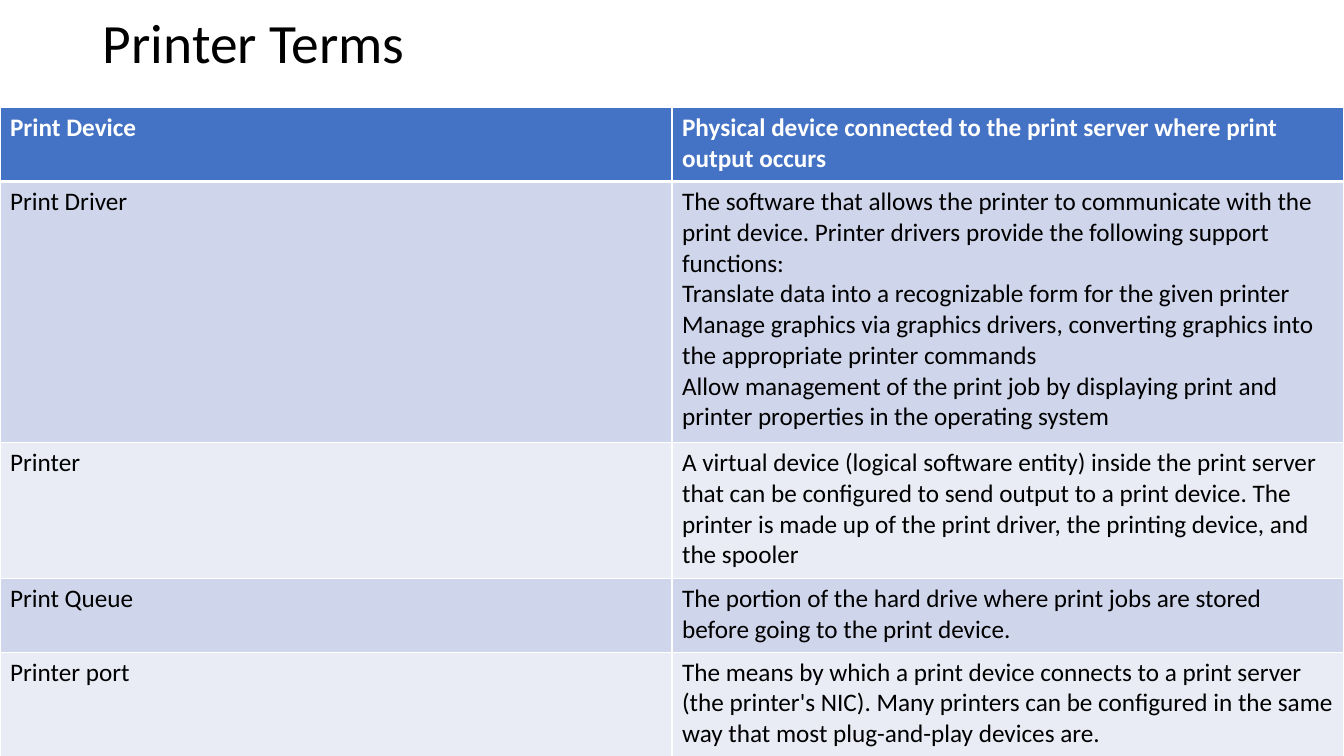
"""Build the Printer Terms slide: a title above a two-column table of definitions."""
import pptx
import pptx.dml.color
import pptx.enum.text
import pptx.oxml
import pptx.oxml.ns
import pptx.util

Inches = pptx.util.Inches
Pt = pptx.util.Pt

COLORS = {
    "text": "000000",
    "white": "FFFFFF",
    "header": "4472C4",
    "odd": "CFD5EA",
    "even": "E9EBF5",
}
ROW_HEIGHTS = [0.73, 2.59, 1.35, 0.73, 1.04]
TERMS = [
    ("Print Device", ["Physical device connected to the print server where print output occurs"]),
    ("Print Driver", [
        "The software that allows the printer to communicate with the print device. "
        "Printer drivers provide the following support functions:",
        "Translate data into a recognizable form for the given printer",
        "Manage graphics via graphics drivers, converting graphics into the "
        "appropriate printer commands",
        "Allow management of the print job by displaying print and printer "
        "properties in the operating system",
    ]),
    ("Printer", [
        "A virtual device (logical software entity) inside the print server that can be "
        "configured to send output to a print device. The printer is made up of the "
        "print driver, the printing device, and the spooler",
    ]),
    ("Print Queue", [
        "The portion of the hard drive where print jobs are stored before going to "
        "the print device.",
    ]),
    ("Printer port", [
        "The means by which a print device connects to a print server (the printer's NIC). "
        "Many printers can be configured in the same way that most plug-and-play devices are.",
    ]),
]


class SlideBuilder:
    def __init__(self, deck, font):
        self.font = font
        self.page = deck.slides.add_slide(deck.slide_layouts[5])

    def color(self, name):
        return pptx.dml.color.RGBColor.from_string(COLORS[name])

    def add_lines(self, frame, lines, color, **formats):
        for index, line in enumerate(lines):
            para = frame.add_paragraph() if index else frame.paragraphs[0]
            para.alignment = pptx.enum.text.PP_ALIGN.LEFT
            span = para.add_run()
            span.text = line
            span.font.color.rgb = self.color(color)
            for key, value in {"name": self.font, **formats}.items():
                setattr(span.font, key, value)

    def title(self, text, left, top, width, height):
        box = self.page.shapes.title
        places = {"left": left, "top": top, "width": width, "height": height}
        for key, value in places.items():
            setattr(box, key, Inches(value))
        frame = box.text_frame
        formats = {
            "word_wrap": True,
            "auto_size": pptx.enum.text.MSO_AUTO_SIZE.NONE,
            "vertical_anchor": pptx.enum.text.MSO_ANCHOR.MIDDLE,
        }
        for key, value in formats.items():
            setattr(frame, key, value)
        self.add_lines(frame, [text], "text", size=Pt(39.6), bold=False)
        frame.paragraphs[0].line_spacing = 0.9

    def borders(self, cell, widths):
        properties = cell._tc.get_or_add_tcPr()
        for index, (side, width) in enumerate(widths.items()):
            properties.insert(index, pptx.oxml.parse_xml(
                f'<a:ln{side} {pptx.oxml.ns.nsdecls("a")} w="{Pt(width)}"><a:solidFill>'
                f'<a:srgbClr val="{COLORS["white"]}"/></a:solidFill></a:ln{side}>'))

    def table(self, terms, heights, left, top, width):
        grid = self.page.shapes.add_table(
            len(terms), 2, Inches(left), Inches(top), Inches(width), Inches(sum(heights))).table
        for column in grid.columns:
            column.width = Inches(width / 2)
        for index, (term, meaning) in enumerate(terms):
            grid.rows[index].height = Inches(heights[index])
            header = index == 0
            fill = "header" if header else ("even", "odd")[index % 2]
            widths = {"L": 1, "R": 1, "T": 3 if index == 1 else 1, "B": 3 if header else 1}
            for cell, lines in zip(grid.rows[index].cells, ([term], meaning)):
                self.add_lines(cell.text_frame, lines, "white" if header else "text",
                               size=Pt(18), bold=header)
                cell.fill.solid()
                cell.fill.fore_color.rgb = self.color(fill)
                self.borders(cell, widths)


deck = pptx.Presentation()
deck.slide_width = Inches(13.33)
deck.slide_height = Inches(7.5)
builder = SlideBuilder(deck, "Calibri")
builder.title("Printer Terms", 0.92, 0.09, 11.5, 0.72)
builder.table(TERMS, ROW_HEIGHTS, 0, 1.07, 13.33)
deck.save("out.pptx")
